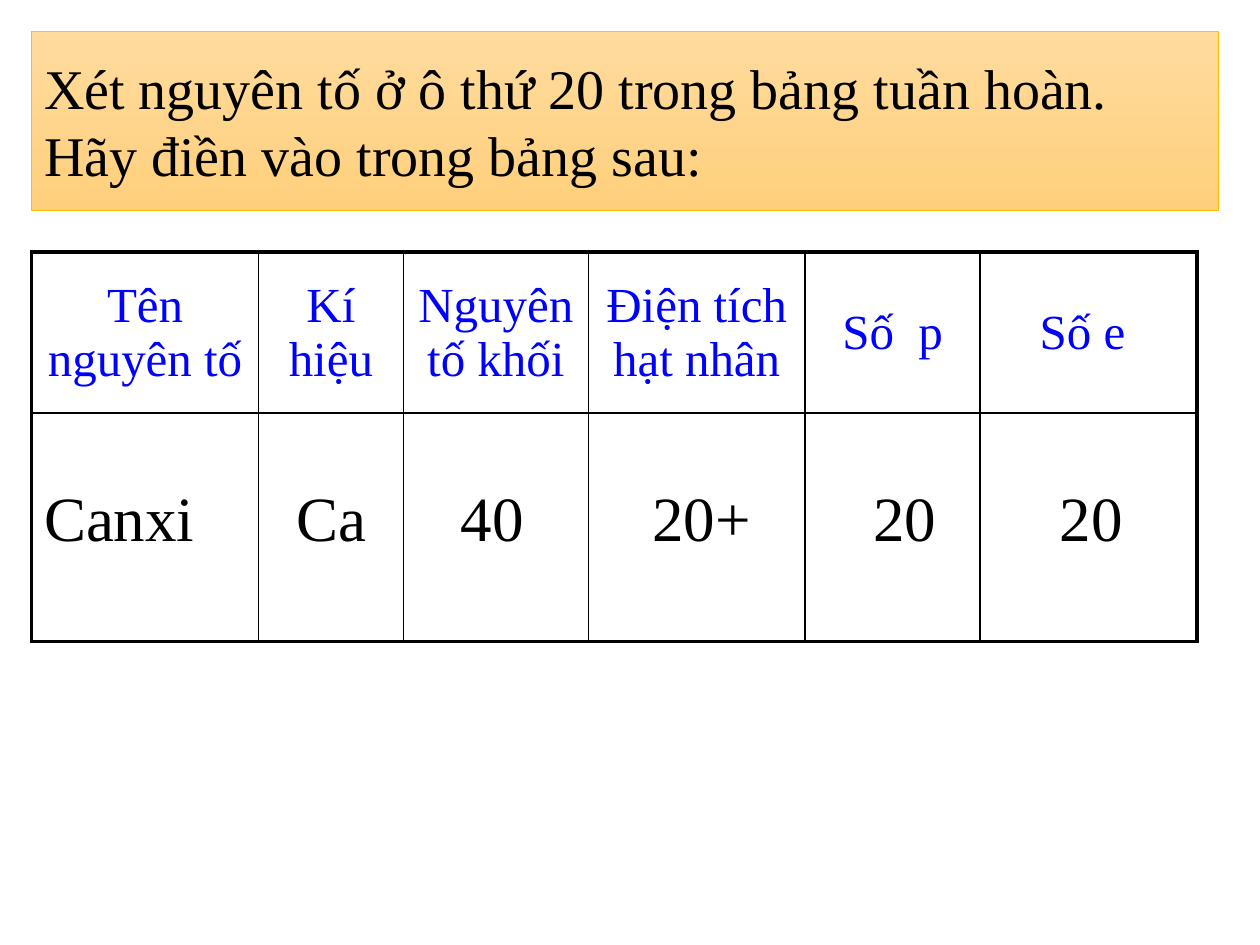
import pptx
import pptx.dml.color
import pptx.enum.shapes
import pptx.enum.text
import pptx.oxml
import pptx.oxml.ns
import pptx.util
from pptx.util import Cm, Pt

RGB = pptx.dml.color.RGBColor
BLACK = RGB(0x00, 0x00, 0x00)
BLUE = RGB(0x00, 0x00, 0xFF)
GOLD = RGB(0xFF, 0xC0, 0x00)
PALE = RGB(0xFF, 0xDB, 0x9E)
DEEP = RGB(0xFF, 0xD0, 0x7C)
MIDDLE = pptx.enum.text.MSO_ANCHOR.MIDDLE
CENTER = pptx.enum.text.PP_ALIGN.CENTER

LEFT = Cm(0.64)
TITLE = "Xét nguyên tố ở ô thứ 20 trong bảng tuần hoàn. Hãy điền vào trong bảng sau:"
HEADS = ["Tên nguyên tố", "Kí hiệu", "Nguyên tố khối",
         "Điện tích hạt nhân", "Số  p", "Số e "]
WIDTHS = [4.57, 2.92, 3.73, 4.37, 3.53, 4.37]
HEIGHTS = [3.25, 4.6]
VALUES = [("Canxi", 0.64, 4.17), ("Ca", 5.72, 2.26), ("40", 9.04, 2.11),
          ("20+", 12.9, 2.74), ("20", 17.35, 2.11), ("20", 21.11, 2.11)]


def write(frame, text, size, color, align=None):
    frame.word_wrap = True
    para = frame.paragraphs[0]
    para.text = text
    para.alignment = align
    para.space_before = Pt(4)
    para.font.name = "Times New Roman"
    para.font.size = Pt(size)
    para.font.color.rgb = color


def add_title(slide):
    box = slide.shapes.add_shape(pptx.enum.shapes.MSO_SHAPE.RECTANGLE,
                                 LEFT, LEFT, Cm(23.93), Cm(3.6))
    box.shadow.inherit = False
    box.fill.gradient()
    box.fill.gradient_angle = 270
    for stop, color in zip(box.fill.gradient_stops, (PALE, DEEP)):
        stop.color.rgb = color
    for stop, place in zip(box.fill.gradient_stops, (0, 1)):
        stop.position = place
    box.line.color.rgb = GOLD
    box.line.width = Pt(0.5)
    box.text_frame.vertical_anchor = MIDDLE
    write(box.text_frame, TITLE, 32, BLACK, pptx.enum.text.PP_ALIGN.LEFT)


def set_edges(cell, outer):
    props = cell._tc.get_or_add_tcPr()
    for spot, (side, thick) in enumerate(outer.items()):
        width = Pt(2.25 if thick else 1)
        edge = pptx.oxml.parse_xml(
            f'<a:{side} {pptx.oxml.ns.nsdecls("a")} w="{width}">'
            f'<a:solidFill><a:srgbClr val="{BLACK}"/></a:solidFill></a:{side}>')
        props.insert(spot, edge)


def add_table(slide):
    rows, cols = len(HEIGHTS), len(WIDTHS)
    table = slide.shapes.add_table(rows, cols, LEFT, Cm(5.08),
                                   Cm(sum(WIDTHS)), Cm(sum(HEIGHTS))).table
    table.first_row = table.horz_banding = False
    for col, width in zip(table.columns, WIDTHS):
        col.width = Cm(width)
    for row, height in zip(table.rows, HEIGHTS):
        row.height = Cm(height)
    for r in range(rows):
        for c in range(cols):
            cell = table.cell(r, c)
            cell.fill.background()
            set_edges(cell, {"lnL": c == 0, "lnR": c == cols - 1,
                             "lnT": r == 0, "lnB": r == rows - 1})
    for c, head in enumerate(HEADS):
        cell = table.cell(0, c)
        cell.vertical_anchor = MIDDLE
        write(cell.text_frame, head, 28, BLUE, CENTER)


def add_value(slide, text, left, width):
    box = slide.shapes.add_textbox(Cm(left), Cm(9.52), Cm(width), Cm(1.8))
    write(box.text_frame, text, 36, BLACK)


def main():
    deck = pptx.Presentation()
    deck.slide_width, deck.slide_height = Cm(25.4), Cm(19.05)
    slide = deck.slides.add_slide(deck.slide_layouts[6])
    add_table(slide)
    add_title(slide)
    for text, left, width in VALUES:
        add_value(slide, text, left, width)
    deck.save("out.pptx")


if __name__ == "__main__":
    main()
